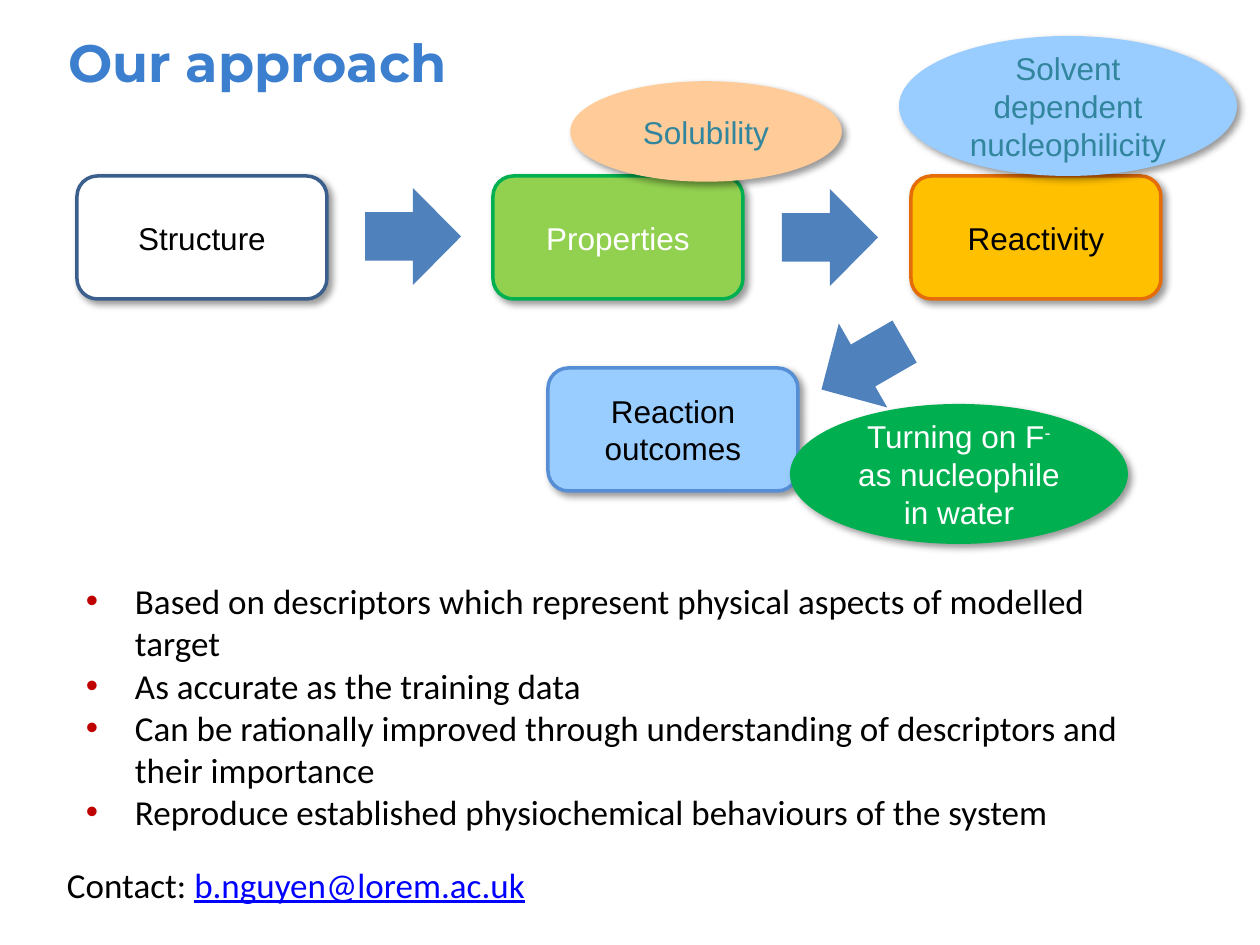
from dataclasses import dataclass

from lxml import etree
from pptx import Presentation
from pptx import util as u
from pptx.dml.color import RGBColor
from pptx.enum import shapes, text
from pptx.oxml import ns

PX = u.Inches(1) / 126
SHAPE = shapes.MSO_SHAPE


@dataclass(frozen=True)
class Theme:
    title_font: str = "Montserrat"
    body_font: str = "Calibri"
    label_font: str = "Arial"
    title_size: int = 30
    body_size: int = 20
    label_size: int = 18
    title: str = "3D7FCF"
    black: str = "000000"
    white: str = "FFFFFF"
    arrow: str = "4F81BD"
    bullet: str = "C00000"
    address: str = "0000FF"
    teal: str = "31859C"
    sky: str = "99CCFF"
    peach: str = "FFCC99"
    green: str = "00B050"
    lime: str = "92D050"
    amber: str = "FFC000"
    navy_edge: str = "3A5F8C"
    orange_edge: str = "E46C0A"
    blue_edge: str = "558ED5"


THEME = Theme()
STEP_SIZE = (250, 123)
ARROW_SIZE = (96, 97)
LARGE_NOTE = (338, 140)
STEP_TOP = 176


def px(*lengths):
    return [round(length * PX) for length in lengths]


def add_xml(parent, tag, **attributes):
    return etree.SubElement(parent, ns.qn(tag), attributes)


def add_run(paragraph, words, font, size, color, **formats):
    run = paragraph.add_run()
    run.text = words
    values = {"name": font, "size": u.Pt(size), **formats}
    for name, value in values.items():
        setattr(run.font, name, value)
    run.font.color.rgb = RGBColor.from_string(color)
    return run


def set_frame(frame, anchor, insets):
    """Wrap the text and set insets in the order left, top, right, bottom."""
    frame.word_wrap = True
    frame.vertical_anchor = anchor
    for side, inset in zip(("left", "top", "right", "bottom"), px(*insets)):
        setattr(frame, f"margin_{side}", inset)


def add_shadow(shape):
    effects = shape._element.spPr.find(ns.qn("a:effectLst"))
    shadow = add_xml(effects, "a:outerShdw", blurRad=str(u.Pt(4)), dist=str(u.Pt(3)),
                     dir="2700000", algn="tl", rotWithShape="0")
    color = add_xml(shadow, "a:srgbClr", val=THEME.black)
    add_xml(color, "a:alpha", val="40000")


def add_filled(slide, kind, place, size, fill, edge=None):
    shape = slide.shapes.add_shape(kind, *px(*place, *size))
    shape.shadow.inherit = False
    shape.fill.solid()
    shape.fill.fore_color.rgb = RGBColor.from_string(fill)
    if edge:
        shape.line.color.rgb = RGBColor.from_string(edge)
        shape.line.width = u.Pt(2)
    else:
        shape.line.fill.background()
    return shape


def add_label(slide, kind, place, size, fill, edge, color, *parts):
    """Add a shadowed shape with centred text; every second part is superscript."""
    shape = add_filled(slide, kind, place, size, fill, edge)
    add_shadow(shape)
    set_frame(shape.text_frame, text.MSO_ANCHOR.MIDDLE, (13, 6, 13, 6))
    paragraph = shape.text_frame.paragraphs[0]
    paragraph.alignment = text.PP_ALIGN.CENTER
    for index, words in enumerate(parts):
        run = add_run(paragraph, words, THEME.label_font, THEME.label_size, color)
        if index % 2:
            run._r.get_or_add_rPr().set("baseline", "30000")


def add_arrow(slide, place, rotation=0):
    arrow = add_filled(slide, SHAPE.RIGHT_ARROW, place, ARROW_SIZE, THEME.arrow)
    arrow.rotation = rotation


def set_title(slide, words):
    title = slide.shapes.title
    title.left, title.top, title.width, title.height = px(55, 14, 1150, 97)
    set_frame(title.text_frame, text.MSO_ANCHOR.MIDDLE, (13, 4, 13, 6))
    paragraph = title.text_frame.paragraphs[0]
    paragraph.alignment = text.PP_ALIGN.LEFT
    add_run(paragraph, words, THEME.title_font, THEME.title_size, THEME.title, bold=True)


def add_text_box(slide, place, size):
    frame = slide.shapes.add_textbox(*px(*place, *size)).text_frame
    set_frame(frame, text.MSO_ANCHOR.TOP, (12, 6, 12, 6))
    return frame


def add_bullets(slide, points):
    frame = add_text_box(slide, (74, 574), (1111, 276))
    indent, = px(49)
    for index, point in enumerate(points):
        paragraph = frame.add_paragraph() if index else frame.paragraphs[0]
        add_run(paragraph, point, THEME.body_font, THEME.body_size, THEME.black)
        properties = paragraph._p.get_or_add_pPr()
        properties.set("marL", str(indent))
        properties.set("indent", str(-indent))
        color = add_xml(properties, "a:buClr")
        add_xml(color, "a:srgbClr", val=THEME.bullet)
        add_xml(properties, "a:buFont", typeface=THEME.label_font)
        add_xml(properties, "a:buChar", char="•")


def add_contact(slide, address):
    paragraph = add_text_box(slide, (55, 857), (615, 55)).paragraphs[0]
    add_run(paragraph, "Contact: ", THEME.body_font, THEME.body_size, THEME.black)
    add_run(paragraph, address, THEME.body_font, THEME.body_size, THEME.address,
            underline=True)


def main():
    deck = Presentation()
    deck.slide_width, deck.slide_height = px(1260, 945)
    slide = deck.slides.add_slide(deck.slide_layouts[5])
    t = THEME

    set_title(slide, "Our approach")
    add_bullets(slide, (
        "Based on descriptors which represent physical aspects of modelled target",
        "As accurate as the training data",
        "Can be rationally improved through understanding of descriptors and their importance",
        "Reproduce established physiochemical behaviours of the system",
    ))

    steps = (
        (77, STEP_TOP, t.white, t.navy_edge, t.black, "Structure"),
        (493, STEP_TOP, t.lime, t.green, t.white, "Properties"),
        (911, STEP_TOP, t.amber, t.orange_edge, t.black, "Reactivity"),
        (548, 368, t.sky, t.blue_edge, t.black, "Reaction outcomes"),
    )
    for left, top, *look in steps:
        add_label(slide, SHAPE.ROUNDED_RECTANGLE, (left, top), STEP_SIZE, *look)

    for left, top, rotation in ((365, 188, 0), (782, 189, 0), (815, 317, 150)):
        add_arrow(slide, (left, top), rotation)

    notes = (
        ((572, 83), (268, 97), t.peach, t.peach, t.teal, "Solubility"),
        ((899, 36), LARGE_NOTE, t.sky, None, t.teal, "Solvent dependent nucleophilicity"),
        ((790, 404), LARGE_NOTE, t.green, None, t.white,
         "Turning on F", "-", " as nucleophile in water"),
    )
    for note in notes:
        add_label(slide, SHAPE.OVAL, *note)

    add_contact(slide, "b.nguyen@lorem.ac.uk")
    deck.save("out.pptx")


if __name__ == "__main__":
    main()
